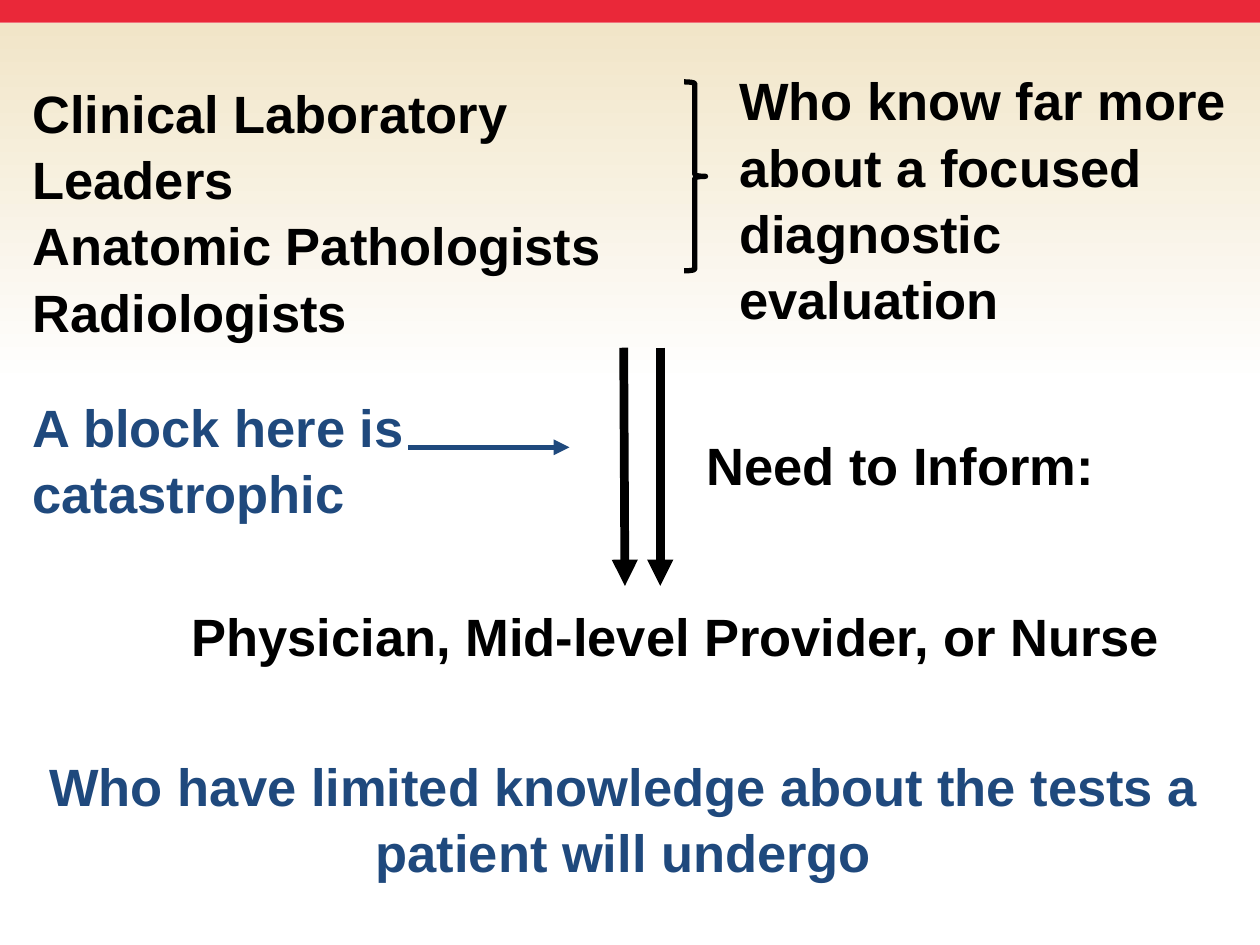
from typing import NamedTuple

from lxml.etree import SubElement
from pptx import Presentation
from pptx.dml.color import RGBColor
from pptx.enum.shapes import MSO_CONNECTOR, MSO_SHAPE
from pptx.enum.text import MSO_ANCHOR, MSO_AUTO_SIZE, PP_ALIGN
from pptx.oxml.ns import qn
from pptx.util import Inches, Pt

BLACK = RGBColor(0x00, 0x00, 0x00)
BLUE = RGBColor(0x1F, 0x49, 0x7D)
RED = RGBColor(0xEA, 0x28, 0x39)
SAND = RGBColor(0xF1, 0xE5, 0xC8)
WHITE = RGBColor(0xFF, 0xFF, 0xFF)

WIDTH, HEIGHT = Inches(10), Inches(7.5)
COLUMN, ROW = WIDTH / 100, HEIGHT / 75


class Box(NamedTuple):
    column: float
    row: float
    columns: float
    rows: float

    def inner(self, column, row, columns, rows):
        return Box(self.column + column, self.row + row, columns, rows)

    def emu(self):
        return (round(self.column * COLUMN), round(self.row * ROW),
                round(self.columns * COLUMN), round(self.rows * ROW))


def add_statement(slide, box, lines, color=BLACK, align=PP_ALIGN.LEFT):
    frame = slide.shapes.add_textbox(*box.emu()).text_frame
    frame.word_wrap = True
    frame.auto_size = MSO_AUTO_SIZE.NONE
    frame.vertical_anchor = MSO_ANCHOR.TOP
    frame.text = "\n".join(lines)
    for paragraph in frame.paragraphs:
        paragraph.alignment = align
        paragraph.line_spacing = 1.05
        paragraph.font.name = "Arial"
        paragraph.font.size = Pt(30)
        paragraph.font.bold = True
        paragraph.font.color.rgb = color


def add_arrow(slide, box, color, weight):
    left, top, width, height = box.emu()
    arrow = slide.shapes.add_connector(
        MSO_CONNECTOR.STRAIGHT, left, top, left + width, top + height)
    arrow.line.color.rgb = color
    arrow.line.width = Pt(weight)
    SubElement(arrow.line._get_or_add_ln(), qn("a:tailEnd"), type="triangle")
    SubElement(arrow._element.spPr, qn("a:effectLst"))


def add_plain_shape(slide, preset, box):
    shape = slide.shapes.add_shape(preset, *box.emu())
    shape.shadow.inherit = False
    return shape


def add_backdrop(slide, box, band_rows):
    glow = add_plain_shape(slide, MSO_SHAPE.RECTANGLE,
                           box.inner(0, band_rows, box.columns, box.rows - band_rows))
    glow.fill.gradient()
    glow.fill.gradient_angle = 270
    for stop, color, position in zip(glow.fill.gradient_stops, (SAND, WHITE), (0, 1)):
        stop.color.rgb = color
        stop.position = position
    glow.line.fill.background()

    band = add_plain_shape(slide, MSO_SHAPE.RECTANGLE,
                           box.inner(0, 0, box.columns, band_rows))
    band.fill.solid()
    band.fill.fore_color.rgb = RED
    band.line.fill.background()


def add_experts(slide, box):
    add_statement(slide, box.inner(0, 1, 53.6, 25.9),
                  ["Clinical Laboratory Leaders", "Anatomic Pathologists", "Radiologists"])
    add_statement(slide, box.inner(56.1, 0, 42.3, 26.3),
                  ["Who know far more about a focused diagnostic evaluation"])
    brace = add_plain_shape(slide, MSO_SHAPE.RIGHT_BRACE, box.inner(52.7, 1.8, 1.7, 15))
    brace.fill.background()
    brace.line.color.rgb = BLACK
    brace.line.width = Pt(3)


def add_handover(slide, box):
    add_statement(slide, box.inner(0, 3, 39.9, 11.1), ["A block here is catastrophic"], BLUE)
    add_statement(slide, box.inner(53.5, 6, 38.4, 6.1), ["Need to Inform:"])
    add_arrow(slide, box.inner(30.8, 7.9, 12.8, 0), BLUE, 3)
    for column, drift in ((47.9, 0.1), (50.8, 0)):
        add_arrow(slide, box.inner(column, 0, drift, box.rows), BLACK, 5)


def add_recipients(slide, box):
    add_statement(slide, box.inner(13.5, 0, 81.3, 11.1),
                  ["Physician, Mid-level Provider, or Nurse"], align=PP_ALIGN.CENTER)
    add_statement(slide, box.inner(0, 11.9, box.columns, 16.2),
                  ["Who have limited knowledge about the tests a patient will undergo"],
                  BLUE, PP_ALIGN.CENTER)


def main():
    deck = Presentation()
    deck.slide_width, deck.slide_height = WIDTH, HEIGHT
    slide = deck.slides.add_slide(deck.slide_layouts[6])
    add_backdrop(slide, Box(0, 0, 100, 30.6), 1.8)
    add_experts(slide, Box(1.6, 4.7, 98.4, 26.9))
    add_handover(slide, Box(1.6, 27.6, 91.9, 18.9))
    add_recipients(slide, Box(-0.5, 47.2, 100, 28.1))
    deck.save("out.pptx")


if __name__ == "__main__":
    main()
